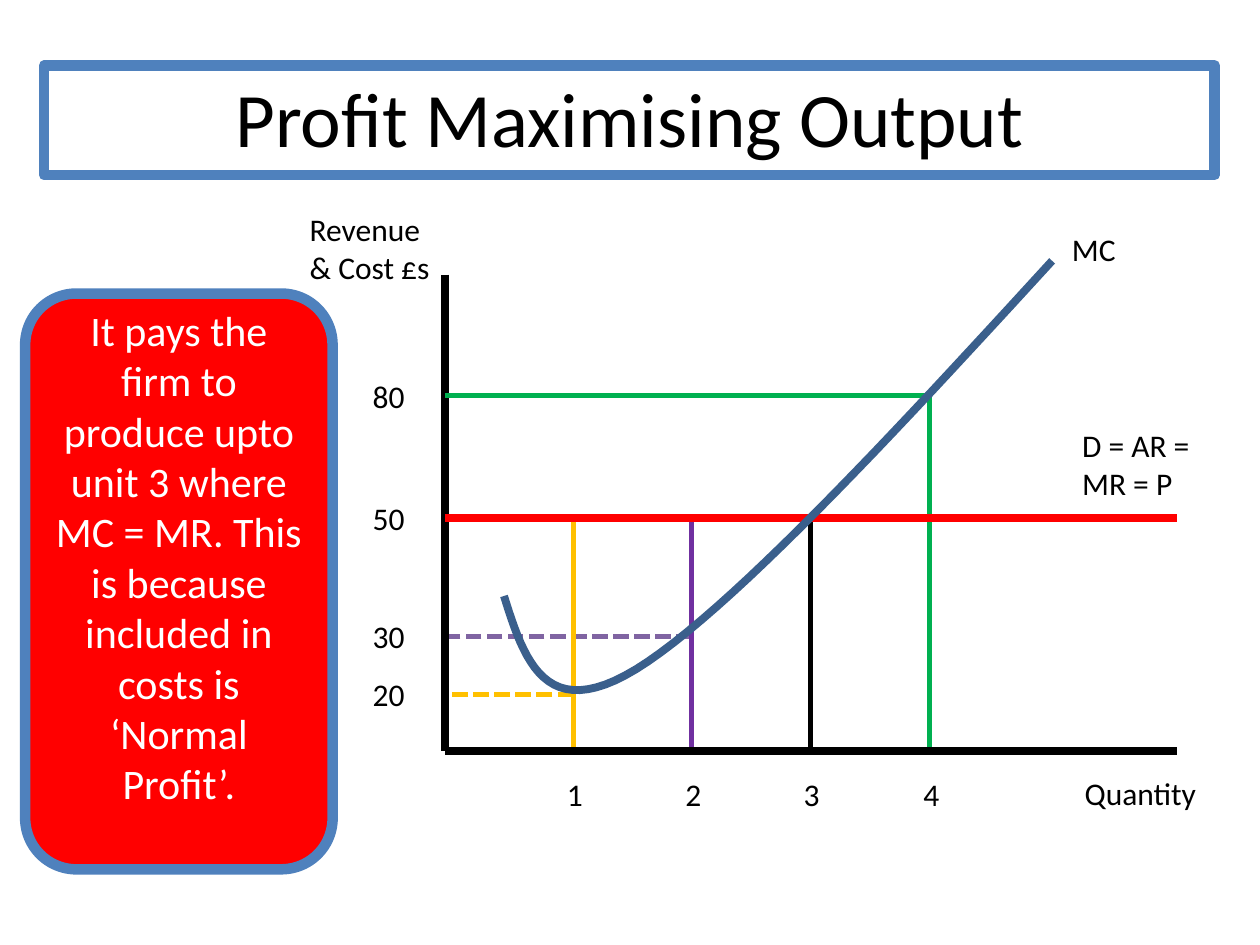
from pptx import Presentation
from pptx.dml.color import RGBColor
from pptx.enum.dml import MSO_LINE
from pptx.enum.shapes import MSO_CONNECTOR, MSO_SHAPE
from pptx.enum.text import MSO_ANCHOR, PP_ALIGN
from pptx.oxml.ns import qn
from pptx.util import Inches, Pt
from lxml import etree

STRAIGHT = MSO_CONNECTOR.STRAIGHT
RECT, ROUND_RECT = MSO_SHAPE.RECTANGLE, MSO_SHAPE.ROUNDED_RECTANGLE
DASH = MSO_LINE.SQUARE_DOT
MIDDLE, TOP = MSO_ANCHOR.MIDDLE, MSO_ANCHOR.TOP
LEFT, CENTER = PP_ALIGN.LEFT, PP_ALIGN.CENTER

COLORS = {
    "black": "000000", "white": "FFFFFF", "red": "FF0000", "green": "00B050",
    "amber": "FFC000", "purple": "7030A0", "lilac": "8064A2",
    "border": "4F81BD", "curve": "3A5F8C",
}


def bezier(p0, p1, p2, p3, steps=24):
    """Return points along a cubic curve, without its start."""
    ts = [i / steps for i in range(1, steps + 1)]
    return [tuple((1 - t) ** 3 * a + 3 * (1 - t) ** 2 * t * b
                  + 3 * (1 - t) * t ** 2 * c + t ** 3 * d
                  for a, b, c, d in zip(p0, p1, p2, p3)) for t in ts]


class DiagramSlide:
    """Hold the style and the current slide, and draw each kind of element."""

    def __init__(self, prs, font="Calibri"):
        self.slide = prs.slides.add_slide(prs.slide_layouts[6])
        self.shapes = self.slide.shapes
        self.font = font

    def rgb(self, name):
        return RGBColor.from_string(COLORS[name])

    def stroke(self, sp, color, width, dash=None):
        sp.line.color.rgb = self.rgb(color)
        sp.line.width = Pt(width)
        if dash:
            sp.line.dash_style = dash

    def set_text(self, sp, text, size, color, align, anchor, bottom=0.05):
        tf = sp.text_frame
        frame = {"word_wrap": True, "vertical_anchor": anchor,
                 "margin_bottom": Inches(bottom)}
        for name, value in frame.items():
            setattr(tf, name, value)
        p = tf.paragraphs[0]
        p.alignment = align
        r = p.add_run()
        r.text = text
        for name, value in {"name": self.font, "size": Pt(size)}.items():
            setattr(r.font, name, value)
        r.font.color.rgb = self.rgb(color)

    def text(self, text, box, size=18, align=LEFT, anchor=TOP):
        sp = self.shapes.add_textbox(*map(Inches, box))
        self.set_text(sp, text, size, "black", align, anchor)

    def box(self, kind, box, line, width, fill=None):
        sp = self.shapes.add_shape(kind, *map(Inches, box))
        sp.shadow.inherit = False
        if fill:
            sp.fill.solid()
            sp.fill.fore_color.rgb = self.rgb(fill)
        else:
            sp.fill.background()
        self.stroke(sp, line, width)
        return sp

    def line(self, x1, y1, x2, y2, color, width=3, dash=None):
        sp = self.shapes.add_connector(STRAIGHT, *map(Inches, (x1, y1, x2, y2)))
        self.stroke(sp, color, width, dash)
        etree.SubElement(sp._element.spPr, qn("a:effectLst"))

    def curve(self, start, segments, color, width):
        points = [start]
        for segment in segments:
            points += bezier(points[-1], *segment)
        points = [(Inches(x), Inches(y)) for x, y in points]
        builder = self.shapes.build_freeform(*points[0])
        builder.add_line_segments(points[1:], close=False)
        sp = builder.convert_to_shape()
        sp.shadow.inherit = False
        sp.fill.background()
        self.stroke(sp, color, width)


def main():
    prs = Presentation()
    prs.slide_width, prs.slide_height = Inches(10), Inches(7.5)
    s = DiagramSlide(prs)

    axis_x, axis_y, axis_end = 3.53, 5.96, 9.34
    prices = {"80": 3.14, "50": 4.11, "30": 5.05, "20": 5.51}
    units = {"1": 4.55, "2": 5.49, "3": 6.43, "4": 7.38}

    s.line(units["2"], prices["30"], axis_x, prices["30"], "lilac", dash=DASH)
    s.line(units["1"], prices["20"], axis_x, prices["20"], "amber", dash=DASH)
    tops = (prices["50"],) * 3 + (prices["80"],)
    for x, top, color in zip(units.values(), tops,
                             ("amber", "purple", "black", "green")):
        s.line(x, top, x, axis_y, color)

    s.text("Profit Maximising Output", (0.5, 0.3, 9, 1.25), 44, CENTER, MIDDLE)
    s.box(RECT, (0.35, 0.52, 9.29, 0.87), "border", 6)

    s.line(axis_x, 2.18, axis_x, axis_y, "black", 4.5)
    s.line(axis_end, axis_y, axis_x, axis_y, "black", 4.5)
    s.line(axis_end, prices["50"], axis_x, prices["50"], "red", 4.5)
    s.line(units["4"], prices["80"], axis_x, prices["80"], "green")
    s.curve((4, 4.73), [((4.16, 5.24), (4.33, 5.75), (5.05, 5.31)),
                        ((5.78, 4.86), (7.07, 3.47), (8.35, 2.07))],
            "curve", 4.5)

    for label, y in prices.items():
        s.text(label, (2.86, y - 0.2, 0.67, 0.4))
    for label, x in units.items():
        s.text(label, (x - 0.15, 6.1, 0.31, 0.4))
    for label, box in (("Revenue & Cost £s", (2.36, 1.62, 1.26, 0.71)),
                       ("Quantity", (8.51, 6.09, 1.26, 0.4)),
                       ("D = AR = MR = P", (8.49, 3.33, 1.1, 0.71)),
                       ("MC", (8.41, 1.78, 0.63, 0.4))):
        s.text(label, box)

    note = s.box(ROUND_RECT, (0.2, 2.33, 2.44, 4.57), "border", 6, "red")
    s.set_text(note, "It pays the firm to produce upto unit 3 where MC = MR. "
               "This is because included in costs is ‘Normal Profit’.",
               24, "white", CENTER, MIDDLE, bottom=0.45)

    prs.save("out.pptx")


if __name__ == "__main__":
    main()
